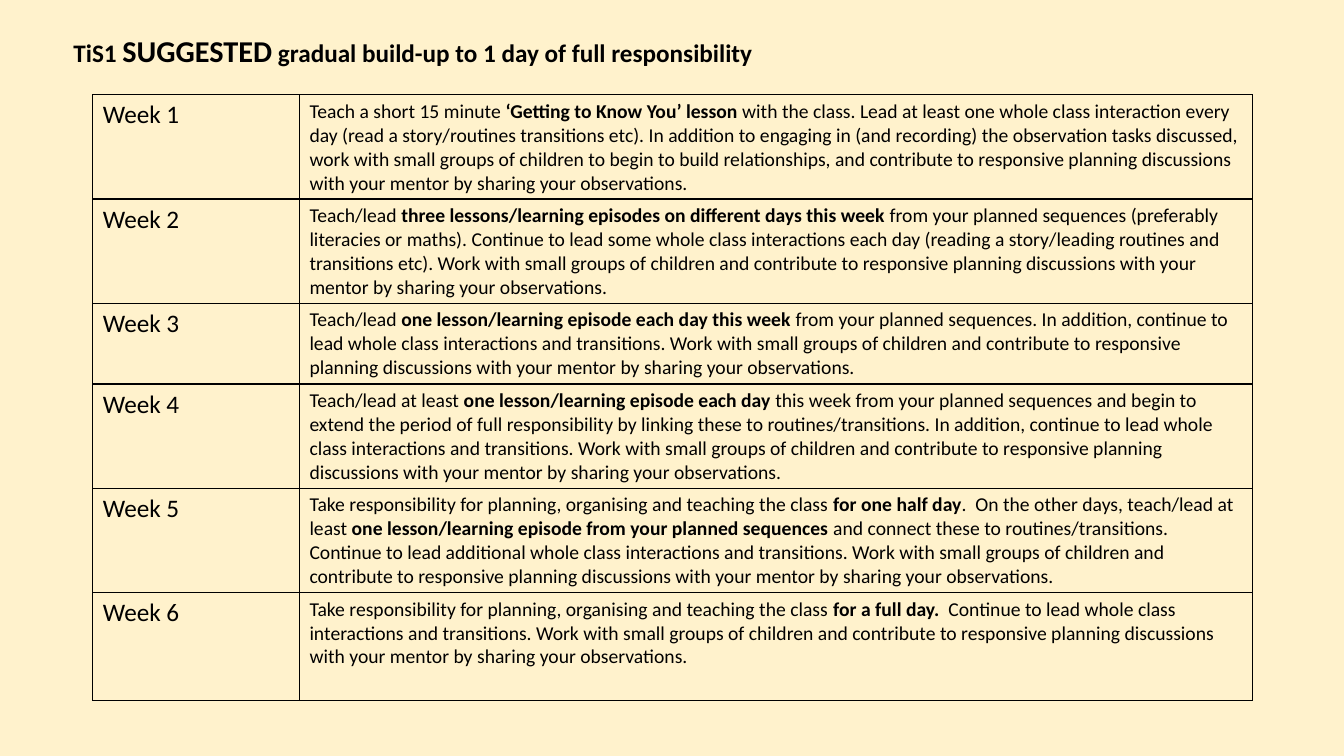
from lxml import etree
from pptx import Presentation
from pptx.dml.color import RGBColor
from pptx.enum import text
from pptx.oxml import ns
from pptx.util import Inches, Pt

BLACK = RGBColor(0x00, 0x00, 0x00)
CREAM = RGBColor(0xFF, 0xF2, 0xCC)

COLUMN_WIDTHS = (2.05, 9.45)
ROW_HEIGHTS = (0.96, 0.96, 0.74, 0.96, 0.96, 1.07)
GROUPS = (
    "Work with small groups of children and contribute to responsive planning "
    "discussions with your mentor by sharing your observations."
)
WEEKS = (
    ("Teach a short 15 minute *‘Getting to Know You’ lesson *with the class. Lead at least "
     "one whole class interaction every day (read a story/routines transitions etc). In "
     "addition to engaging in (and recording) the observation tasks discussed, work with "
     "small groups of children to begin to build relationships, and contribute to responsive "
     "planning discussions with your mentor by sharing your observations.",),
    ("Teach/lead *three lessons/learning episodes on different days this week *from your "
     "planned sequences (preferably literacies or maths). Continue to lead some whole class "
     "interactions each day (reading a story/leading routines and transitions etc). " + GROUPS,),
    ("Teach/lead *one lesson/learning episode each day this week *from your planned "
     "sequences. In addition, continue to lead whole class interactions and transitions. "
     + GROUPS,),
    ("Teach/lead at least *one lesson/learning episode each day *this week from your planned "
     "sequences and begin to extend the period of full responsibility by linking these to "
     "routines/transitions. In addition, continue to lead whole class interactions and "
     "transitions. " + GROUPS,),
    ("Take responsibility for planning, organising and teaching the class *for one half day*.  "
     "On the other days, teach/lead at least *one lesson/learning episode from your planned "
     "sequences *and connect these to routines/transitions.",
     "Continue to lead additional whole class interactions and transitions. " + GROUPS),
    ("Take responsibility for planning, organising and teaching the class *for a full day. * "
     "Continue to lead whole class interactions and transitions. " + GROUPS,),
)


def add_run(p, words, size, bold=False):
    """Add one formatted run to a paragraph."""
    r = p.add_run()
    r.text = words
    for name, value in {"name": "Calibri", "size": Pt(size), "bold": bold}.items():
        setattr(r.font, name, value)
    r.font.color.rgb = BLACK


def add_title(s):
    """Add the heading with its enlarged word."""
    sp = s.shapes.add_textbox(Inches(0.63), Inches(0.31), Inches(11.5), Inches(0.71))
    tf = sp.text_frame
    formats = {"word_wrap": True, "vertical_anchor": text.MSO_ANCHOR.TOP}
    for name, value in formats.items():
        setattr(tf, name, value)
    p = tf.paragraphs[0]
    p.line_spacing = 0.9
    add_run(p, "TiS1 ", 18, True)
    add_run(p, "SUGGESTED", 21.6, True)
    add_run(p, " gradual build-up to 1 day of full responsibility", 18, True)


def set_borders(cell):
    """Draw a thin black line on each side of a cell."""
    props = cell._tc.get_or_add_tcPr()
    for side in ("a:lnL", "a:lnR", "a:lnT", "a:lnB"):
        line = etree.SubElement(props, ns.qn(side), w=str(Pt(1)))
        fill = etree.SubElement(line, ns.qn("a:solidFill"))
        etree.SubElement(fill, ns.qn("a:srgbClr"), val=str(BLACK))


def fill_cell(cell, paragraphs, size):
    """Write paragraphs in a cell, with bold between asterisks."""
    tf = cell.text_frame
    for i, words in enumerate(paragraphs):
        p = tf.add_paragraph() if i else tf.paragraphs[0]
        for j, part in enumerate(words.split("*")):
            add_run(p, part, size, j % 2 == 1)
    set_borders(cell)
    cell.fill.background()


def add_week_table(s):
    """Add the table with one row for each week."""
    frame = s.shapes.add_table(
        len(WEEKS), len(COLUMN_WIDTHS), Inches(0.92), Inches(0.94),
        Inches(sum(COLUMN_WIDTHS)), Inches(sum(ROW_HEIGHTS)))
    table = frame.table
    for name, value in {"first_row": False, "horz_banding": False}.items():
        setattr(table, name, value)
    for column, width in zip(table.columns, COLUMN_WIDTHS):
        column.width = Inches(width)
    for i, (height, paragraphs) in enumerate(zip(ROW_HEIGHTS, WEEKS)):
        table.rows[i].height = Inches(height)
        fill_cell(table.cell(i, 0), [f"Week {i + 1}"], 18)
        fill_cell(table.cell(i, 1), paragraphs, 14)


def main():
    """Build and save the slide."""
    prs = Presentation()
    prs.slide_width, prs.slide_height = Inches(13.33), Inches(7.5)
    s = prs.slides.add_slide(prs.slide_layouts[6])
    s.background.fill.solid()
    s.background.fill.fore_color.rgb = CREAM
    add_title(s)
    add_week_table(s)
    prs.save("out.pptx")


if __name__ == "__main__":
    main()
